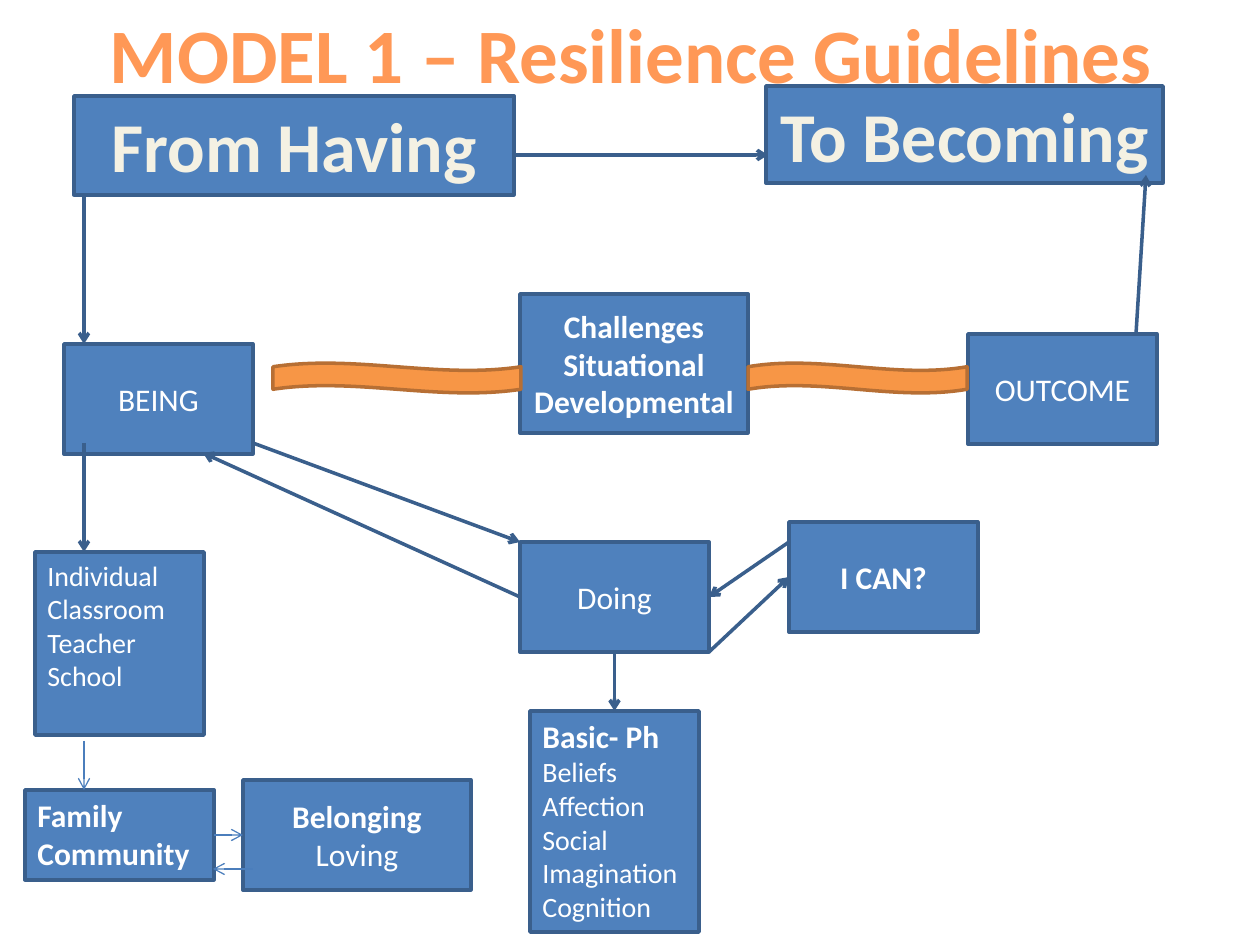
import pptx
import pptx.util
import pptx.dml.color
import pptx.enum.shapes
import pptx.enum.text
import pptx.oxml.ns
import lxml.etree

PX = pptx.util.Inches(1) / 126
TOP, LEFT, BOTTOM, RIGHT = range(4)
SHAPE = pptx.enum.shapes.MSO_SHAPE
ALIGN = pptx.enum.text.PP_ALIGN
ANCHOR = pptx.enum.text.MSO_ANCHOR
GROW = pptx.enum.text.MSO_AUTO_SIZE.SHAPE_TO_FIT_TEXT

COLORS = {
    "box": "4F81BD", "edge": "3A5F8C", "thin": "4B7EBC",
    "wave": "F79646", "wave_edge": "B76F34",
    "title": "FF9856", "heading": "F4F1E3", "text": "FFFFFF",
}
MIDDLE = {"word_wrap": True, "vertical_anchor": ANCHOR.MIDDLE}
GROWING = {"word_wrap": True, "vertical_anchor": ANCHOR.TOP, "auto_size": GROW}
UNWRAPPED = {**GROWING, "word_wrap": False}


def emu(*lengths):
    return [round(length * PX) for length in lengths]


def rgb(name):
    return pptx.dml.color.RGBColor.from_string(COLORS[name])


def set_values(target, values):
    for name, value in values.items():
        setattr(target, name, value)


class Diagram:
    def __init__(self, slide, font="Calibri"):
        self.shapes = slide.shapes
        self.font = font

    def add_lines(self, shape, lines, frame_format, align, color):
        """Fill a shape with lines of (text, size, bold)."""
        frame = shape.text_frame
        set_values(frame, frame_format)
        for index, (text, size, bold) in enumerate(lines):
            paragraph = frame.add_paragraph() if index else frame.paragraphs[0]
            paragraph.alignment = align
            run = paragraph.add_run()
            run.text = text
            set_values(run.font, {"name": self.font, "size": pptx.util.Pt(size), "bold": bold})
            run.font.color.rgb = rgb(color)

    def outline(self, line, color, width):
        line.color.rgb = rgb(color)
        line.width = pptx.util.Pt(width)

    def block(self, kind, place, fill, edge):
        shape = self.shapes.add_shape(kind, *emu(*place))
        shape.shadow.inherit = False
        shape.fill.solid()
        shape.fill.fore_color.rgb = rgb(fill)
        self.outline(shape.line, edge, 2)
        return shape

    def box(self, place, lines, frame_format=MIDDLE, align=ALIGN.CENTER, color="text"):
        shape = self.block(SHAPE.RECTANGLE, place, "box", "edge")
        self.add_lines(shape, lines, frame_format, align, color)
        return shape

    def wave(self, *place):
        self.block(SHAPE.WAVE, place, "wave", "wave_edge")

    def title(self, place, text):
        box = self.shapes.add_textbox(*emu(*place))
        self.add_lines(box, [(text, 44, True)], UNWRAPPED, ALIGN.CENTER, "title")

    def arrow(self, start, end, color="edge", width=2):
        """Each end is an (x, y) point or a (shape, side) pair."""
        points = [(0, 0) if self.is_joint(stop) else stop for stop in (start, end)]
        line = self.shapes.add_connector(
            pptx.enum.shapes.MSO_CONNECTOR.STRAIGHT, *emu(*points[0], *points[1]))
        for stop, join in ((start, line.begin_connect), (end, line.end_connect)):
            if self.is_joint(stop):
                join(*stop)
        self.outline(line.line, color, width)
        qn = pptx.oxml.ns.qn
        properties = line.element.spPr
        lxml.etree.SubElement(properties.find(qn("a:ln")), qn("a:tailEnd"), type="arrow")
        lxml.etree.SubElement(properties, qn("a:effectLst"))

    @staticmethod
    def is_joint(stop):
        return not isinstance(stop[0], int)


def main():
    deck = pptx.Presentation()
    set_values(deck, {"slide_width": pptx.util.Inches(10), "slide_height": pptx.util.Inches(7.5)})
    model = Diagram(deck.slides.add_slide(deck.slide_layouts[6]))
    step = (189, 110)

    model.box((74, 96, 440, 99), [("From Having", 40, True)], GROWING, color="heading")
    model.box((766, 86, 397, 97), [("To Becoming", 40, True)], UNWRAPPED, color="heading")
    model.box((64, 344, *step), [("BEING", 18, False)])
    model.box((520, 294, 228, 139),
              [("Challenges", 18, True), ("Situational Developmental", 18, True)])
    model.box((968, 334, *step), [("OUTCOME", 18, False)])
    settings = ["Individual", "Classroom", "Teacher", "School"]
    model.box((35, 552, 169, 183), [(name, 16, False) for name in settings],
              GROWING, ALIGN.LEFT)
    doing = model.box((520, 542, *step), [("Doing", 18, False)])
    i_can = model.box((789, 522, *step), [("I CAN?", 18, True)])
    resources = ["Beliefs", "Affection", "Social", "Imagination", "Cognition"]
    basic_ph = model.box(
        (530, 711, 169, 221),
        [("Basic- Ph", 18, True)] + [(name, 16, False) for name in resources],
        GROWING, ALIGN.LEFT)
    family = model.box((25, 790, 189, 90), [("Family", 18, True), ("Community", 18, True)],
                       GROWING, ALIGN.LEFT)
    belonging = model.box((243, 780, 228, 110),
                          [("Belonging", 18, True), ("Loving", 18, False)])

    for start, end in [
        ((84, 443), (84, 552)),
        ((512, 155), (768, 155)),
        ((84, 195), (84, 344)),
        ((1136, 334), (1146, 175)),
        ((253, 443), (520, 542)),
        ((709, 652), (i_can, LEFT)),
        ((doing, LEFT), (203, 453)),
        ((789, 542), (doing, RIGHT)),
        ((doing, BOTTOM), (basic_ph, TOP)),
    ]:
        model.arrow(start, end)

    model.wave(273, 363, 248, 30)
    model.wave(748, 363, 219, 30)
    model.title((93, 0, 1077, 106), "MODEL 1 – Resilience Guidelines")

    for start, end in [
        ((84, 741), (84, 790)),
        ((family, RIGHT), (belonging, LEFT)),
        ((253, 869), (213, 869)),
    ]:
        model.arrow(start, end, "thin", 0.75)

    deck.save("out.pptx")


if __name__ == "__main__":
    main()
